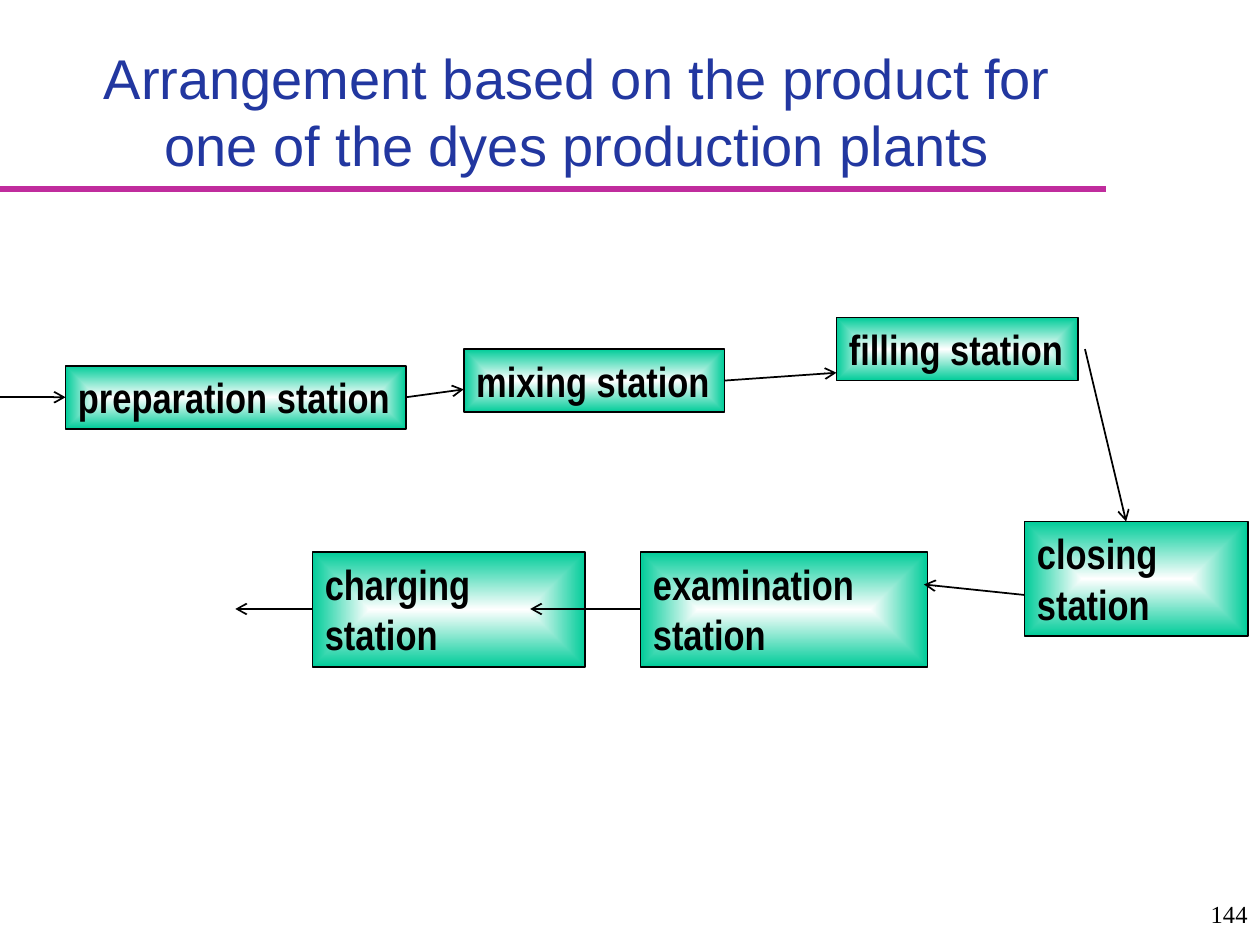
from dataclasses import dataclass

from lxml import etree
from pptx import Presentation
from pptx import util as u
from pptx.dml.color import RGBColor
from pptx.enum import shapes, text
from pptx.oxml.ns import qn

COLORS = {"title": "2237A0", "rule": "C02C9D", "ink": "000000",
          "paper": "FFFFFF", "station": "00CC99"}
ONE_LINE, TWO_LINES = 36, 65.5  # station heights


@dataclass
class Station:
    label: str
    x: float
    y: float
    w: float
    h: float = ONE_LINE


@dataclass
class Line:
    x1: float
    y1: float
    x2: float
    y2: float
    color: str = "ink"
    width: float = 1
    arrow: bool = True


def rgb(name: str) -> RGBColor:
    return RGBColor.from_string(COLORS[name])


def add_run(tf, words: str, font: str, size: float, color: str,
            align=text.PP_ALIGN.LEFT, bold: bool = False) -> None:
    p = tf.paragraphs[0]
    p.alignment = align
    r = p.add_run()
    r.text = words
    r.font.name, r.font.size, r.font.bold = font, u.Pt(size), bold
    r.font.color.rgb = rgb(color)


def add_box(s, x: float, y: float, w: float, h: float, line: str, width: float):
    sp = s.shapes.add_shape(shapes.MSO_SHAPE.RECTANGLE,
                            u.Pt(x), u.Pt(y), u.Pt(w), u.Pt(h))
    sp.shadow.inherit = False
    sp.fill.background()
    sp.line.color.rgb = rgb(line)
    sp.line.width = u.Pt(width)
    return sp


def fill_from_center(sp) -> None:
    sp.fill.gradient()
    for stop, color in zip(sp.fill.gradient_stops, ("paper", "station")):
        stop.color.rgb = rgb(color)
    grad = sp._element.spPr.find(qn("a:gradFill"))
    grad.remove(grad.find(qn("a:lin")))
    shade = etree.SubElement(grad, qn("a:path"), {"path": "rect"})
    etree.SubElement(shade, qn("a:fillToRect"), dict.fromkeys("ltrb", "50000"))


def add_station(s, st: Station) -> None:
    sp = add_box(s, st.x, st.y, st.w, st.h, "ink", 1)
    fill_from_center(sp)
    tf = sp.text_frame
    tf.word_wrap = st.h > ONE_LINE
    tf.auto_size = text.MSO_AUTO_SIZE.SHAPE_TO_FIT_TEXT
    tf.vertical_anchor = text.MSO_ANCHOR.TOP
    add_run(tf, st.label, "Arial Narrow", 24, "ink", bold=True)


def add_line(s, ln: Line) -> None:
    c = s.shapes.add_connector(shapes.MSO_CONNECTOR.STRAIGHT, u.Pt(ln.x1),
                               u.Pt(ln.y1), u.Pt(ln.x2), u.Pt(ln.y2))
    c.line.color.rgb = rgb(ln.color)
    c.line.width = u.Pt(ln.width)
    if ln.arrow:
        etree.SubElement(c.line._get_or_add_ln(), qn("a:tailEnd"), {"type": "arrow"})
    etree.SubElement(c._element.spPr, qn("a:effectLst"))


STATIONS = [
    Station("preparation station", 37.5, 209, 194.5),
    Station("filling station", 478, 181.5, 138),
    Station("mixing station", 265, 199.5, 149),
    Station("closing station", 585.5, 298, 127.5, TWO_LINES),
    Station("examination station", 366, 315.5, 164, TWO_LINES),
    Station("charging station", 178.5, 315.5, 156, TWO_LINES),
]

FLOW = [
    Line(0, 227, 37.5, 227),
    Line(232, 227, 265, 222.5),
    Line(414, 217.5, 478, 213),
    Line(620, 199.5, 643.5, 298),
    Line(585.5, 340, 528, 334),
    Line(366, 348, 303, 348),
    Line(178.5, 348, 134.5, 348),
]


def main() -> None:
    prs = Presentation()
    prs.slide_width, prs.slide_height = u.Pt(720), u.Pt(540)
    s = prs.slides.add_slide(prs.slide_layouts[6])

    # Title and the rule below it
    add_line(s, Line(0, 108, 632, 108, "rule", 4, arrow=False))
    tf = s.shapes.add_textbox(u.Pt(24), u.Pt(18), u.Pt(612), u.Pt(87)).text_frame
    tf.word_wrap = True
    tf.vertical_anchor = text.MSO_ANCHOR.BOTTOM
    add_run(tf, "Arrangement based on the product for one of the dyes production plants",
            "Arial", 32, "title", text.PP_ALIGN.CENTER)

    # Slide number
    tf = add_box(s, 552, 504, 168, 36, "paper", 0.75).text_frame
    tf.word_wrap = False
    tf.vertical_anchor = text.MSO_ANCHOR.MIDDLE
    add_run(tf, "144", "Times New Roman", 14, "ink", text.PP_ALIGN.RIGHT)

    # Production line
    for st in STATIONS:
        add_station(s, st)
    for ln in FLOW:
        add_line(s, ln)

    prs.save("out.pptx")


if __name__ == "__main__":
    main()
